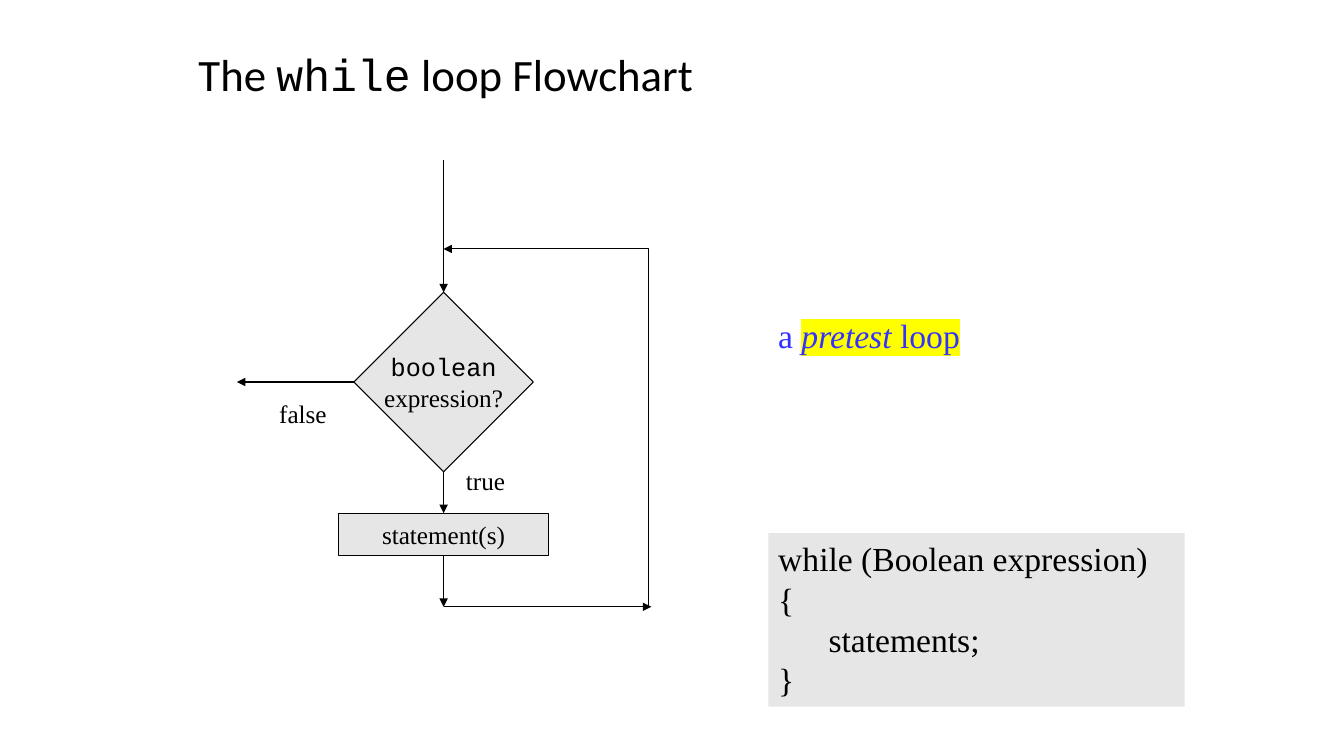
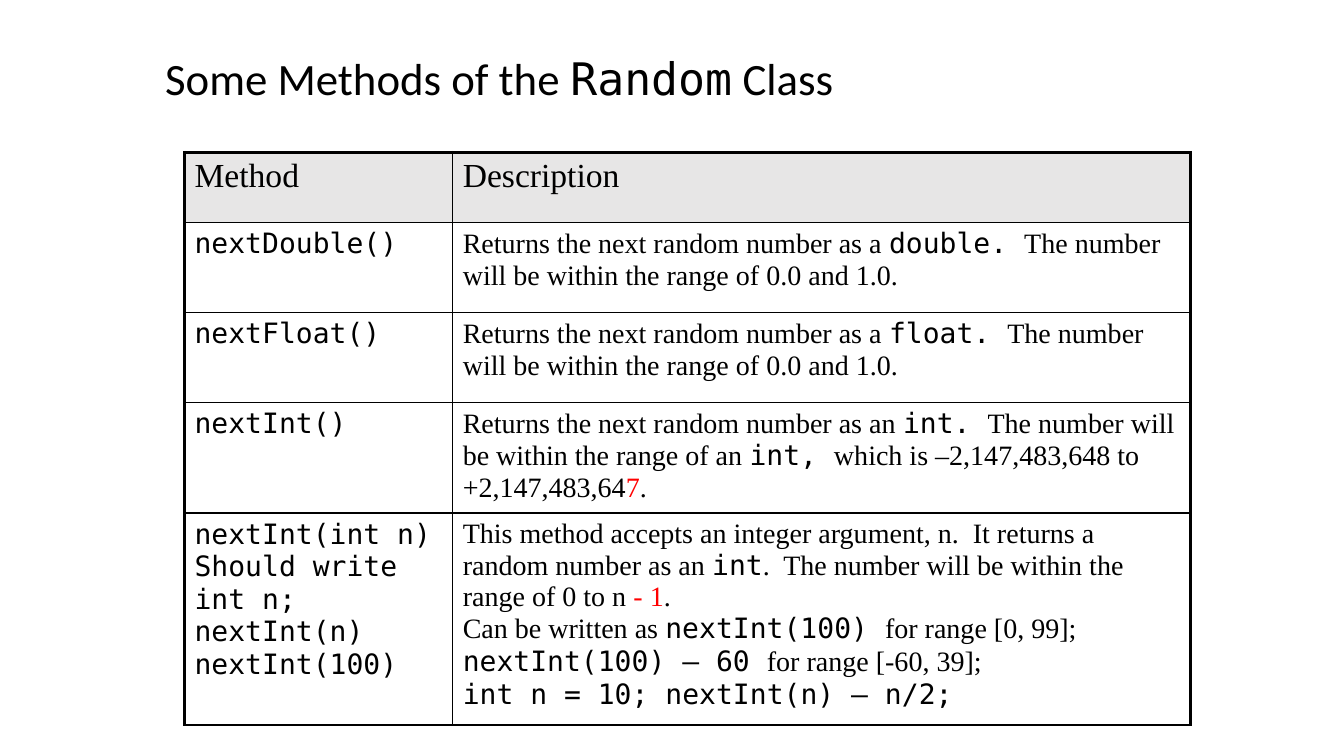
from dataclasses import dataclass
from itertools import product
from typing import Optional

from lxml.etree import SubElement
from pptx import Presentation
from pptx.dml.color import RGBColor
from pptx.enum.shapes import MSO_CONNECTOR, MSO_SHAPE
from pptx.enum.text import MSO_ANCHOR, PP_ALIGN
from pptx.oxml.ns import qn
from pptx.shapes.autoshape import Shape
from pptx.slide import Slide
from pptx.table import _Cell
from pptx.text.text import TextFrame, _Run
from pptx.util import Emu, Pt

EMU_PER_PX = 9144  # 100 px to the inch
BLACK, GREY, RED, BLUE, YELLOW = "000000", "E7E6E6", "FF0000", "3333FF", "FFFF00"
HEADING, SERIF, COURIER, MONO = (
    "Calibri", "Times New Roman", "Courier New", "DejaVu Sans Mono")
THIN, INNER_RULE, OUTER_RULE = 0.75, 1, 2.25


@dataclass(frozen=True)
class Span:
    text: str
    font: str = SERIF
    size: int = 24
    color: str = BLACK
    italic: bool = False
    highlight: Optional[str] = None


Paragraph = tuple[Span, ...]


@dataclass(frozen=True)
class Box:
    left: int
    top: int
    width: int
    height: int

    def emu(self) -> tuple[Emu, ...]:
        return tuple(px(n) for n in (self.left, self.top, self.width, self.height))


@dataclass(frozen=True)
class Joint:
    shape: Shape
    site: int


@dataclass(frozen=True)
class Arrow:
    start: tuple[int, int]
    end: tuple[int, int]
    leaves: Optional[Joint] = None
    enters: Optional[Joint] = None
    bent: bool = False


def px(length: int) -> Emu:
    return Emu(length * EMU_PER_PX)


def rgb(code: str) -> RGBColor:
    return RGBColor.from_string(code)


def style_span(run: _Run, span: Span) -> None:
    font_format = {"name": span.font, "size": Pt(span.size), "italic": span.italic}
    for attribute, value in font_format.items():
        setattr(run.font, attribute, value)
    run.font.color.rgb = rgb(span.color)
    if span.highlight:
        properties = run.font._element
        highlight = SubElement(properties, qn("a:highlight"))
        SubElement(highlight, qn("a:srgbClr"), val=span.highlight)
        properties.find(qn("a:solidFill")).addnext(highlight)


def write(frame: TextFrame, paragraphs: list[Paragraph],
          align: PP_ALIGN = PP_ALIGN.LEFT, spacing: float = 1.0) -> None:
    for index, spans in enumerate(paragraphs):
        paragraph = frame.add_paragraph() if index else frame.paragraphs[0]
        paragraph.alignment, paragraph.line_spacing = align, spacing
        for span in spans:
            run = paragraph.add_run()
            run.text = span.text
            style_span(run, span)


def add_text(slide: Slide, box: Box, paragraphs: list[Paragraph], wrap: bool = True,
             anchor: MSO_ANCHOR = MSO_ANCHOR.TOP,
             align: PP_ALIGN = PP_ALIGN.LEFT, spacing: float = 1.0) -> None:
    frame = slide.shapes.add_textbox(*box.emu()).text_frame
    frame.word_wrap, frame.vertical_anchor = wrap, anchor
    write(frame, paragraphs, align, spacing)


def add_title(slide: Slide, box: Box, before: str, code: str, after: str,
              code_font: str) -> None:
    spans = (Span(before, HEADING, 32), Span(code, code_font, 32),
             Span(after, HEADING, 32))
    add_text(slide, box, [spans], anchor=MSO_ANCHOR.MIDDLE, spacing=0.9)


def add_grey_shape(slide: Slide, kind: MSO_SHAPE, box: Box,
                   outlined: bool = True) -> Shape:
    shape = slide.shapes.add_shape(kind, *box.emu())
    shape.shadow.inherit = False
    shape.fill.solid()
    shape.fill.fore_color.rgb = rgb(GREY)
    if outlined:
        shape.line.color.rgb = rgb(BLACK)
        shape.line.width = Pt(THIN)
    else:
        shape.line.fill.background()
    return shape


def add_step(slide: Slide, kind: MSO_SHAPE, box: Box,
             paragraphs: list[Paragraph]) -> Shape:
    """Add a flowchart node with centred text."""
    step = add_grey_shape(slide, kind, box)
    frame = step.text_frame
    frame.word_wrap, frame.vertical_anchor = False, MSO_ANCHOR.MIDDLE
    write(frame, paragraphs, PP_ALIGN.CENTER)
    return step


def add_arrow(slide: Slide, arrow: Arrow) -> None:
    kind = MSO_CONNECTOR.ELBOW if arrow.bent else MSO_CONNECTOR.STRAIGHT
    connector = slide.shapes.add_connector(
        kind, *(px(n) for n in arrow.start + arrow.end))
    if arrow.leaves:
        connector.begin_connect(arrow.leaves.shape, arrow.leaves.site)
    if arrow.enters:
        connector.end_connect(arrow.enters.shape, arrow.enters.site)
    connector.line.color.rgb = rgb(BLACK)
    connector.line.width = Pt(THIN)
    properties = connector._element.spPr
    SubElement(properties.find(qn("a:ln")), qn("a:tailEnd"), type="triangle")
    SubElement(properties, qn("a:effectLst"))
    if arrow.bent:  # turn right at the start: up first, then across
        guides = properties.find(qn("a:prstGeom")).get_or_add_avLst()
        SubElement(guides, qn("a:gd"), name="adj1", fmla="val 0")


def set_borders(cell: _Cell, widths: dict[str, float]) -> None:
    properties = cell._tc.get_or_add_tcPr()
    for position, (side, width) in enumerate(widths.items()):
        border = SubElement(properties, qn(f"a:ln{side}"), w=str(Pt(width)))
        fill = SubElement(border, qn("a:solidFill"))
        SubElement(fill, qn("a:srgbClr"), val=BLACK)
        properties.insert(position, border)


def build_flowchart(slide: Slide) -> None:
    add_title(slide, Box(187, 22, 549, 109), "The ", "while", " loop Flowchart", COURIER)

    code = add_grey_shape(slide, MSO_SHAPE.RECTANGLE, Box(762, 529, 413, 172), False)
    code.text_frame.vertical_anchor = MSO_ANCHOR.TOP
    lines = ("while (Boolean expression)", "{", "statements;", "}")
    write(code.text_frame, [(Span(line),) for line in lines])
    body = code.text_frame.paragraphs[2]
    body._p.get_or_add_pPr().set("marL", str(px(50)))

    axis, test_y, loop_x, loop_top, loop_bottom = 440, 379, 643, 247, 602
    test = add_step(slide, MSO_SHAPE.DIAMOND, Box(axis - 89, test_y - 89, 178, 178),
                    [(Span("boolean", COURIER, 18),), (Span("expression?", size=18),)])
    statements = add_step(slide, MSO_SHAPE.RECTANGLE, Box(axis - 104, 509, 208, 42),
                          [(Span("statement(s)", size=18),)])
    for label, box in (("true", Box(452, 457, 59, 40)),
                       ("false", Box(267, 390, 67, 40))):
        add_text(slide, box, [(Span(label, size=18),)], wrap=False,
                 align=PP_ALIGN.CENTER)

    for arrow in (
        Arrow((axis, 159), (axis, 290), enters=Joint(test, 0)),
        Arrow((axis - 89, test_y), (235, test_y), leaves=Joint(test, 1)),
        Arrow((axis, 468), (axis, 509), Joint(test, 2), Joint(statements, 0)),
        Arrow((axis, 551), (axis, loop_bottom), leaves=Joint(statements, 2)),
        Arrow((axis, loop_bottom), (loop_x + 3, loop_bottom)),
        Arrow((loop_x, loop_bottom), (axis, loop_top), bent=True),
    ):
        add_arrow(slide, arrow)

    add_text(slide, Box(762, 308, 313, 50),
             [(Span("a ", color=BLUE),
               Span("pretest", color=BLUE, italic=True, highlight=YELLOW),
               Span(" loop", color=BLUE, highlight=YELLOW))])


def prose(text: str, color: str = BLACK) -> Span:
    return Span(text, SERIF, 20, color)


def code(text: str) -> Span:
    return Span(text, MONO, 20)


def real_number_row(method: str, kind: str) -> tuple[list[Paragraph], ...]:
    return ([(code(method),)],
            [(prose("Returns the next random number as a "), code(f"{kind}. "),
              prose("The number will be within the range of 0.0 and 1.0."))])


def build_method_table(slide: Slide) -> None:
    add_title(slide, Box(154, 18, 763, 125), "Some Methods of the ", "Random", " Class",
              MONO)
    rows = (
        ([(Span("Method"),)], [(Span("Description"),)]),
        real_number_row("nextDouble()", "double"),
        real_number_row("nextFloat()", "float"),
        ([(code("nextInt()"),)],
         [(prose("Returns the next random number as an "), code("int. "),
           prose("The number will be within the range of an "), code("int, "),
           prose("which is –2,147,483,648 to +2,147,483,64"), prose("7", RED),
           prose("."))]),
        ([(code(line),) for line in ("nextInt(int n)", "Should write", "int n;",
                                     "nextInt(n)", "nextInt(100)")],
         [(prose("This method accepts an integer argument, n.  "
                 "It returns a random number as an "), code("int"),
           prose(".  The number will be within the range of 0 to n "),
           prose("- 1", RED), prose(".")),
          (prose("Can be written as "), code("nextInt(100) "),
           prose("for range [0, 99]; "), code("nextInt(100) – 60 "),
           prose("for range [-60, 39];")),
          (code("int n = 10; nextInt(n) – n/2;"),)]),
    )
    widths, heights = (266, 732), (70, 89, 89, 104, 198)
    frame = Box(183, 151, sum(widths), sum(heights))
    table = slide.shapes.add_table(len(rows), len(widths), *frame.emu()).table
    table.horz_banding = False
    for column, width in zip(table.columns, widths):
        column.width = px(width)
    for row, height in zip(table.rows, heights):
        row.height = px(height)

    last_row, last_column = len(rows) - 1, len(widths) - 1
    for r, c in product(range(len(rows)), range(len(widths))):
        cell = table.cell(r, c)
        if r == 0:
            cell.fill.solid()
            cell.fill.fore_color.rgb = rgb(GREY)
        else:
            cell.fill.background()
        on_edge = {"L": c == 0, "R": c == last_column, "T": r == 0, "B": r == last_row}
        set_borders(cell, {side: OUTER_RULE if edge else INNER_RULE
                           for side, edge in on_edge.items()})
        write(cell.text_frame, rows[r][c])


def main() -> None:
    presentation = Presentation()
    presentation.slide_width, presentation.slide_height = px(1333), px(750)
    blank = presentation.slide_layouts[6]
    for build in (build_flowchart, build_method_table):
        build(presentation.slides.add_slide(blank))
    presentation.save("out.pptx")


if __name__ == "__main__":
    main()
